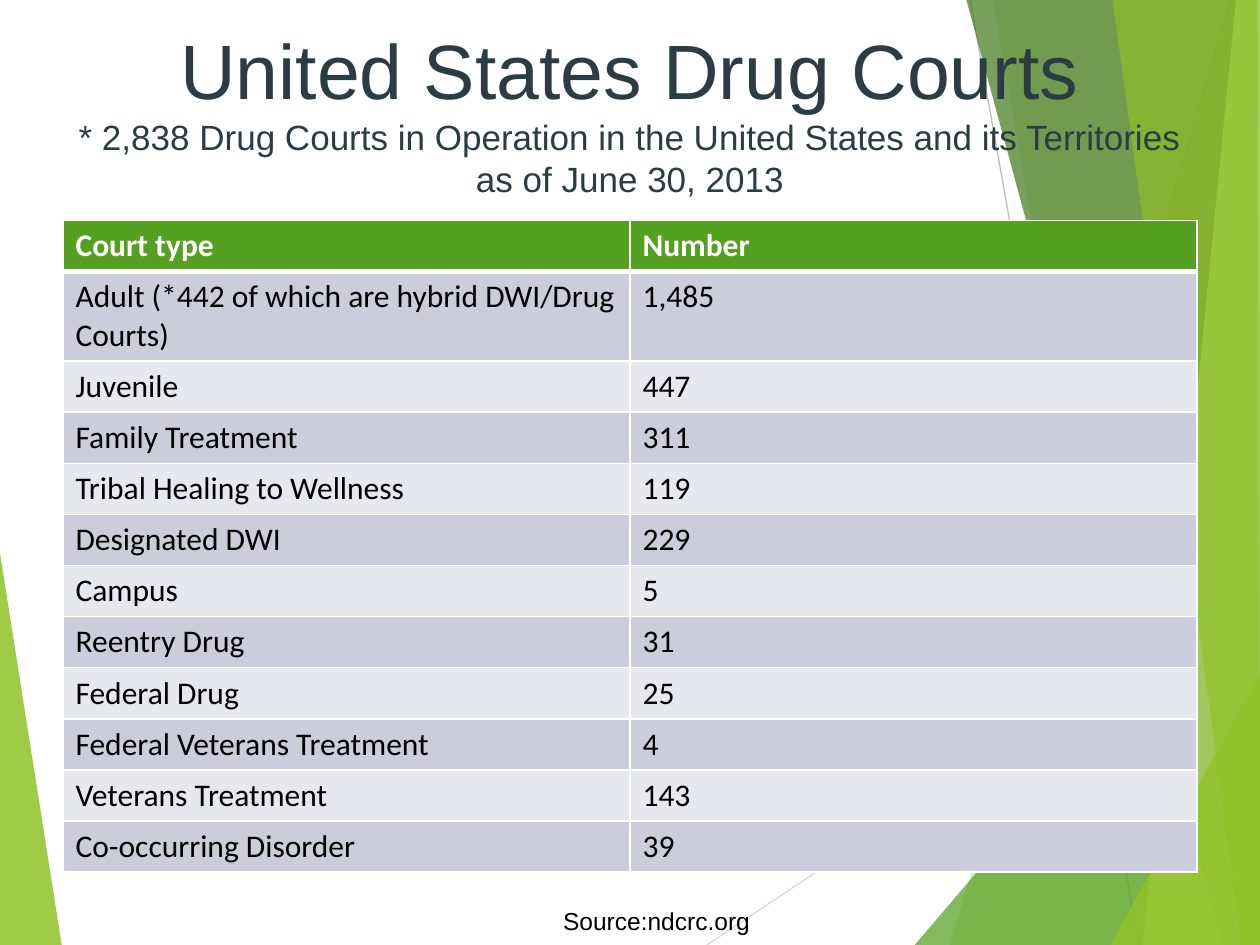
from lxml import etree
from pptx import Presentation
from pptx import util as u
from pptx.dml.color import RGBColor
from pptx.enum import text
from pptx.oxml.ns import qn

COLORS = {
    "lime": "90C226", "green": "54A021", "forest": "3F7819", "pale lime": "C0E474",
    "light gray": "D9D9D9", "gray": "BFBFBF", "slate": "2C3C43",
    "white": "FFFFFF", "black": "000000", "band dark": "CCCCDD", "band light": "E7E7EF",
}
TITLE_ONLY = 5

LEFT_FACET = ("lime", 85, [(0, 4.39), (0.49, 7.5), (0, 7.5)])
RAYS = [
    ("light gray", (5.61, 7.5), (10, 4.57)),
    ("gray", (7.7, 0), (9.04, 7.5)),
]
RIGHT_FACETS = [  # colour, opacity in percent, corners
    ("lime", 30, [(9.75, 0), (7.54, 7.5), (10, 7.5), (10, 0)]),
    ("lime", 20, [(7.88, 0), (9.19, 7.5), (10, 7.5), (10, 0)]),
    ("green", 72, [(7.26, 7.5), (10, 4.29), (10, 7.5)]),
    ("forest", 70, [(7.67, 0), (9.7, 7.5), (10, 7.5), (10, 0)]),
    ("pale lime", 70, [(9.81, 0), (9.07, 7.5), (10, 7.5), (10, 0)]),
    ("lime", 65, [(8.83, 0), (9.86, 7.5), (10, 7.5), (9.98, 0)]),
    ("lime", 80, [(8.81, 7.5), (10, 5.35), (10, 7.5)]),
]
COURTS = [
    ("Court type", "Number"),
    ("Adult (*442 of which are hybrid DWI/Drug Courts)", "1,485"),
    ("Juvenile", "447"),
    ("Family Treatment", "311"),
    ("Tribal Healing to Wellness", "119"),
    ("Designated DWI", "229"),
    ("Campus", "5"),
    ("Reentry Drug", "31"),
    ("Federal Drug", "25"),
    ("Federal Veterans Treatment", "4"),
    ("Veterans Treatment", "143"),
    ("Co-occurring Disorder", "39"),
]


def rgb(name):
    return RGBColor.from_string(COLORS[name])


def add_text(paragraph, words, *, size, color="black", font="Arial", bold=False):
    run = paragraph.add_run()
    run.text = words
    run.font.size = u.Pt(size)
    run.font.name = font
    run.font.bold = bold
    run.font.color.rgb = rgb(color)


def add_facet(slide, color, opacity, corners):
    points = [(u.Inches(x), u.Inches(y)) for x, y in corners]
    outline = slide.shapes.build_freeform(*points[0])
    outline.add_line_segments(points[1:], close=True)
    facet = outline.convert_to_shape()
    facet.shadow.inherit = False
    facet.line.fill.background()
    facet.fill.solid()
    facet.fill.fore_color.rgb = rgb(color)
    tint = facet.element.spPr.find(qn("a:solidFill"))[0]
    etree.SubElement(tint, qn("a:alpha"), val=str(opacity * 1000))


def add_ray(slide, color, start, end):
    ray = slide.shapes.add_connector(1, *map(u.Inches, start + end))
    ray.line.color.rgb = rgb(color)
    ray.line.width = u.Pt(0.75)
    etree.SubElement(ray.element.spPr, qn("a:effectLst"))


def add_backdrop(slide):
    add_facet(slide, *LEFT_FACET)
    for ray in RAYS:
        add_ray(slide, *ray)
    for facet in RIGHT_FACETS:
        add_facet(slide, *facet)


def fill_title(slide):
    title = slide.shapes.title
    title.left, title.top = u.Inches(0.5), u.Inches(0.21)
    title.width, title.height = u.Inches(9), u.Inches(1.34)
    frame = title.text_frame
    frame.auto_size = text.MSO_AUTO_SIZE.NONE
    frame.vertical_anchor = text.MSO_ANCHOR.MIDDLE
    heading = frame.paragraphs[0]
    heading.alignment = text.PP_ALIGN.CENTER
    add_text(heading, "United States Drug Courts", size=44, color="slate")
    heading.add_line_break()
    add_text(heading, "* 2,838 Drug Courts in Operation in the United States and its "
             "Territories as of June 30, 2013", size=20, color="slate")
    # Bring the title in front of the backdrop
    title.element.getparent().append(title.element)


def set_borders(cell, **widths):
    """Draw white borders; the fill must come after them in the cell properties."""
    properties = cell._tc.get_or_add_tcPr()
    for position, side in enumerate(("L", "R", "T", "B")):
        border = etree.Element(qn(f"a:ln{side}"), w=str(u.Pt(widths.get(side, 1))))
        fill = etree.SubElement(border, qn("a:solidFill"))
        etree.SubElement(fill, qn("a:srgbClr"), val=COLORS["white"])
        properties.insert(position, border)


def add_court_table(slide):
    table = slide.shapes.add_table(
        len(COURTS), 2, u.Inches(0.5), u.Inches(1.75), u.Inches(9), u.Inches(4.87)).table
    # The wrapped first entry needs two lines
    table.rows[1].height = u.Inches(0.7)
    for r, court in enumerate(COURTS):
        header = r == 0
        band = "green" if header else "band dark" if r % 2 else "band light"
        for c, words in enumerate(court):
            cell = table.cell(r, c)
            cell.fill.solid()
            cell.fill.fore_color.rgb = rgb(band)
            set_borders(cell, T=3 if r == 1 else 1, B=3 if header else 1)
            add_text(cell.text_frame.paragraphs[0], words, size=18, font="Calibri",
                     color="white" if header else "black", bold=header)


def add_source(slide):
    source = slide.shapes.add_textbox(
        u.Inches(4.37), u.Inches(7.14), u.Inches(1.69), u.Inches(0.34))
    source.text_frame.word_wrap = False
    add_text(source.text_frame.paragraphs[0], "Source:ndcrc.org", size=14)


def main():
    deck = Presentation()
    deck.slide_width, deck.slide_height = u.Inches(10), u.Inches(7.5)
    slide = deck.slides.add_slide(deck.slide_layouts[TITLE_ONLY])
    add_backdrop(slide)
    fill_title(slide)
    add_court_table(slide)
    add_source(slide)
    deck.save("out.pptx")


if __name__ == "__main__":
    main()
